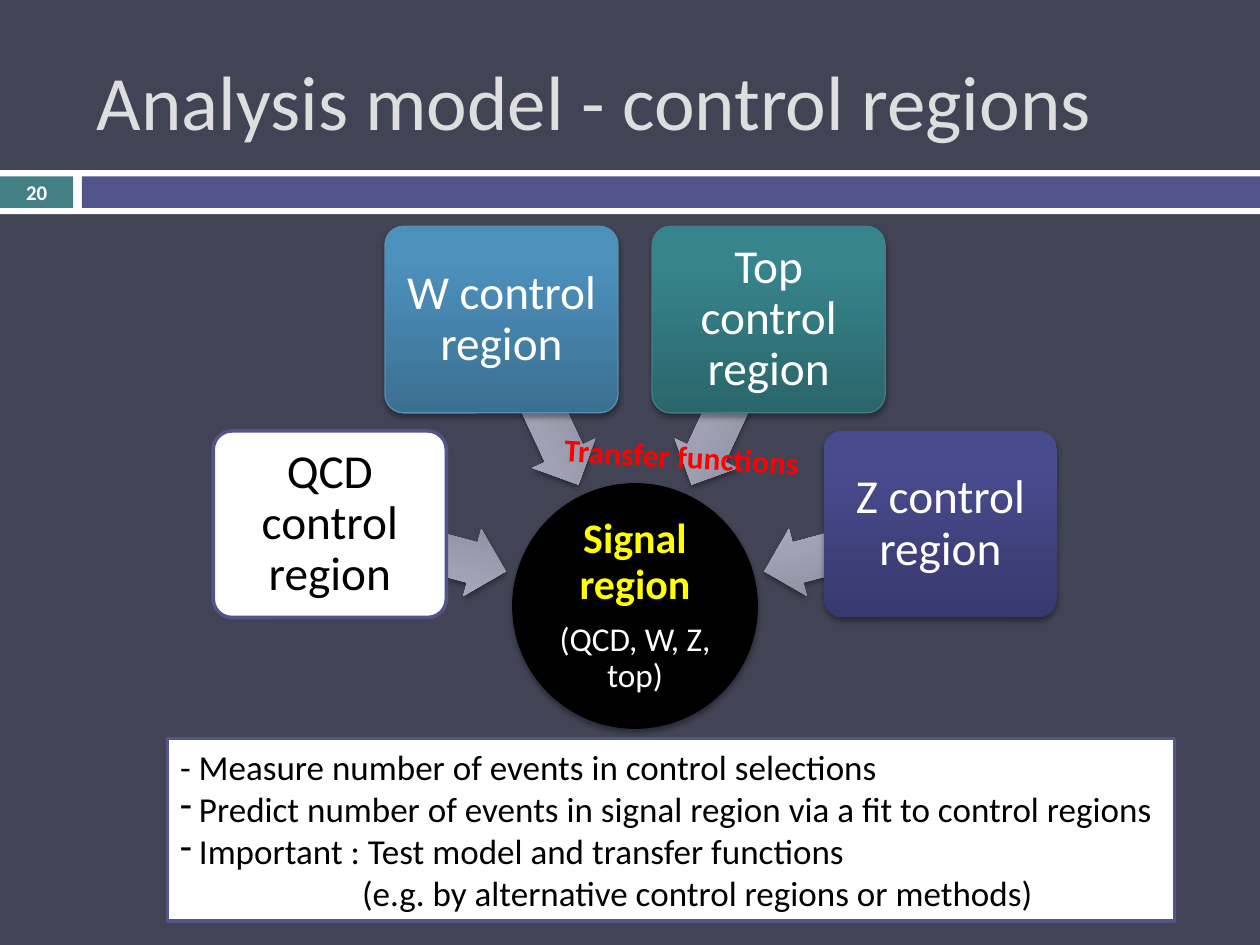
"""Build the slide on control regions feeding the signal region."""
from copy import deepcopy
from dataclasses import dataclass
from math import cos, radians, sin
from typing import Optional

from lxml import etree
from pptx import Presentation
from pptx import util as u
from pptx.dml.color import RGBColor
from pptx.enum import shapes, text
from pptx.oxml import ns

Kind = shapes.MSO_SHAPE
Side = text.PP_ALIGN
Mid = text.MSO_ANCHOR.MIDDLE
Pt = u.Pt


@dataclass(frozen=True)
class Theme:
    font: str = "Calibri"
    back: str = "424456"
    white: str = "FFFFFF"
    black: str = "000000"
    teal: str = "438086"
    violet: str = "53548A"
    title: str = "DEDEDE"
    yellow: str = "FFFF00"
    red: str = "FF0000"
    arrow: tuple = ("848494", "ABACC0", "ACACC2")
    blue: tuple = ("3B6F91", "4C90BC", "4A91BF")
    green: tuple = ("2A666B", "37848C", "36868E")
    indigo: tuple = ("38396D", "484A8E", "474990")
    head: float = 44
    node: float = 27
    core: float = 24
    note: float = 20
    sub: float = 19
    label: float = 18
    page: float = 11.9


T = Theme()


@dataclass(frozen=True)
class Line:
    words: str
    size: float
    color: str
    bold: bool = False
    side: Side = Side.CENTER
    space: float = 0
    pitch: float = 1
    left: float = 0
    bullet: str = ""


@dataclass(frozen=True)
class Node:
    words: str
    angle: float
    fill: tuple
    ink: str
    edge: Optional[str] = None
    width: float = 0.75
    shade: bool = True


@dataclass(frozen=True)
class Bar:
    left: float
    top: float
    width: float
    height: float
    color: str


HUB = (362.9, 346.3)
DISC = 139.7
BARS = (
    Bar(0, 97.2, 720, 25.2, T.white),
    Bar(0, 100.8, 41.8, 18, T.teal),
    Bar(46.8, 100.8, 673.2, 18, T.violet),
)
NODES = (
    Node("QCD control region", 195, (T.white,), T.black, T.violet, 2, False),
    Node("W control region", 245, T.blue, T.white, "588FB3"),
    Node("Top control region", 295, T.green, T.white, "407F85"),
    Node("Z control region", 345, T.indigo, T.white),
)
NOTES = (
    ("- Measure number of events in control selections", 0, ""),
    ("Predict number of events in signal region via a fit to control regions", 10.8, "-"),
    ("Important : Test model and transfer functions", 10.8, "-"),
    ("(e.g. by alternative control regions or methods)", 104, ""),
)


def rgb(code: str) -> RGBColor:
    return RGBColor.from_string(code)


def paint(item, tones: tuple) -> None:
    if len(tones) == 1:
        item.fill.solid()
        item.fill.fore_color.rgb = rgb(tones[0])
        return
    item.fill.gradient()
    item.fill.gradient_angle = 90
    stops = item._element.spPr.find(".//" + ns.qn("a:gsLst"))
    stops.append(deepcopy(stops[-1]))
    for stop, place, tone in zip(item.fill.gradient_stops, (0, 0.8, 1), tones):
        stop.position = place
        stop.color.rgb = rgb(tone)


def shade(item) -> None:
    base = item._element.spPr.find(ns.qn("a:effectLst"))
    cast = etree.SubElement(base, ns.qn("a:outerShdw"), blurRad=str(Pt(3.1)),
                            dist=str(Pt(1.8)), dir="5400000", rotWithShape="0")
    tone = etree.SubElement(cast, ns.qn("a:srgbClr"), val=T.black)
    etree.SubElement(tone, ns.qn("a:alpha"), val="35000")


def draw(page, kind: Kind, spot: tuple, tones: tuple, edge: Optional[str] = None,
         width: float = 0.75, cast: bool = False):
    item = page.shapes.add_shape(kind, *map(Pt, spot))
    item.shadow.inherit = False
    paint(item, tones)
    if edge:
        item.line.color.rgb = rgb(edge)
        item.line.width = Pt(width)
    else:
        item.line.fill.background()
    if cast:
        shade(item)
    return item


def write(item, lines: tuple, inset: Optional[float] = None, wrap: bool = True) -> None:
    frame = item.text_frame
    frame.word_wrap = wrap
    frame.vertical_anchor = Mid
    if inset is not None:
        frame.margin_left = frame.margin_right = Pt(inset)
        frame.margin_top = frame.margin_bottom = Pt(inset)
    for rank, line in enumerate(lines):
        para = frame.add_paragraph() if rank else frame.paragraphs[0]
        para.text = line.words
        para.alignment = line.side
        para.line_spacing = line.pitch
        para.space_after = Pt(line.space)
        if line.left:
            props = para._p.get_or_add_pPr()
            props.set("marL", str(Pt(line.left)))
            if line.bullet:
                props.set("indent", str(-Pt(line.left)))
                etree.SubElement(props, ns.qn("a:buChar"), char=line.bullet)
        para.font.name = T.font
        para.font.size = Pt(line.size)
        para.font.bold = line.bold
        para.font.color.rgb = rgb(line.color)


def place(page, spot: tuple, line: Line, wrap: bool = True):
    box = page.shapes.add_textbox(*map(Pt, spot))
    write(box, (line,), wrap=wrap)
    return box


def orbit(angle: float, reach: float, width: float, height: float) -> tuple:
    turn = radians(angle)
    return (HUB[0] + reach * cos(turn) - width / 2,
            HUB[1] + reach * sin(turn) - height / 2, width, height)


def join(page, node: Node) -> None:
    arrow = draw(page, Kind.LEFT_ARROW, orbit(node.angle, 128.7, 104.4, 39.6),
                 T.arrow, cast=True)
    arrow.rotation = node.angle
    arrow.adjustments[0] = 0.6
    arrow.adjustments[1] = 0.5
    box = draw(page, Kind.ROUNDED_RECTANGLE, orbit(node.angle, 180.6, 133.2, 106.6),
               node.fill, node.edge, node.width, node.shade)
    box.adjustments[0] = 0.1
    write(box, (Line(node.words, T.node, node.ink, pitch=0.9),), 4.3)


def main() -> None:
    deck = Presentation()
    deck.slide_width, deck.slide_height = Pt(720), Pt(540)
    page = deck.slides.add_slide(deck.slide_layouts[6])
    page.background.fill.solid()
    page.background.fill.fore_color.rgb = rgb(T.back)
    for bar in BARS:
        draw(page, Kind.RECTANGLE, (bar.left, bar.top, bar.width, bar.height), (bar.color,))
    place(page, (48.2, 18, 660.2, 77.8),
          Line("Analysis model - control regions", T.head, T.title, side=Side.LEFT))
    place(page, (0, 100.1, 41.8, 19.4), Line("20", T.page, T.white, True))
    disc = draw(page, Kind.OVAL, orbit(0, 0, DISC, DISC), (T.black,), T.black, cast=True)
    write(disc, (Line("Signal region", T.core, T.yellow, True, space=8.4, pitch=0.9),
                 Line("(QCD, W, Z, top)", T.sub, T.white, pitch=0.9)), 1.5)
    for node in NODES:
        join(page, node)
    note = draw(page, Kind.RECTANGLE, (95.8, 421.9, 575.3, 104.4), (T.white,), T.violet, 2)
    write(note, tuple(Line(words, T.note, T.black, side=Side.LEFT, left=left, bullet=mark)
                      for words, left, mark in NOTES))
    label = place(page, (315.4, 246.2, 149.8, 28.8),
                  Line("Transfer functions", T.label, T.red, True, Side.LEFT), False)
    label.rotation = 3.3
    deck.save("out.pptx")


if __name__ == "__main__":
    main()
